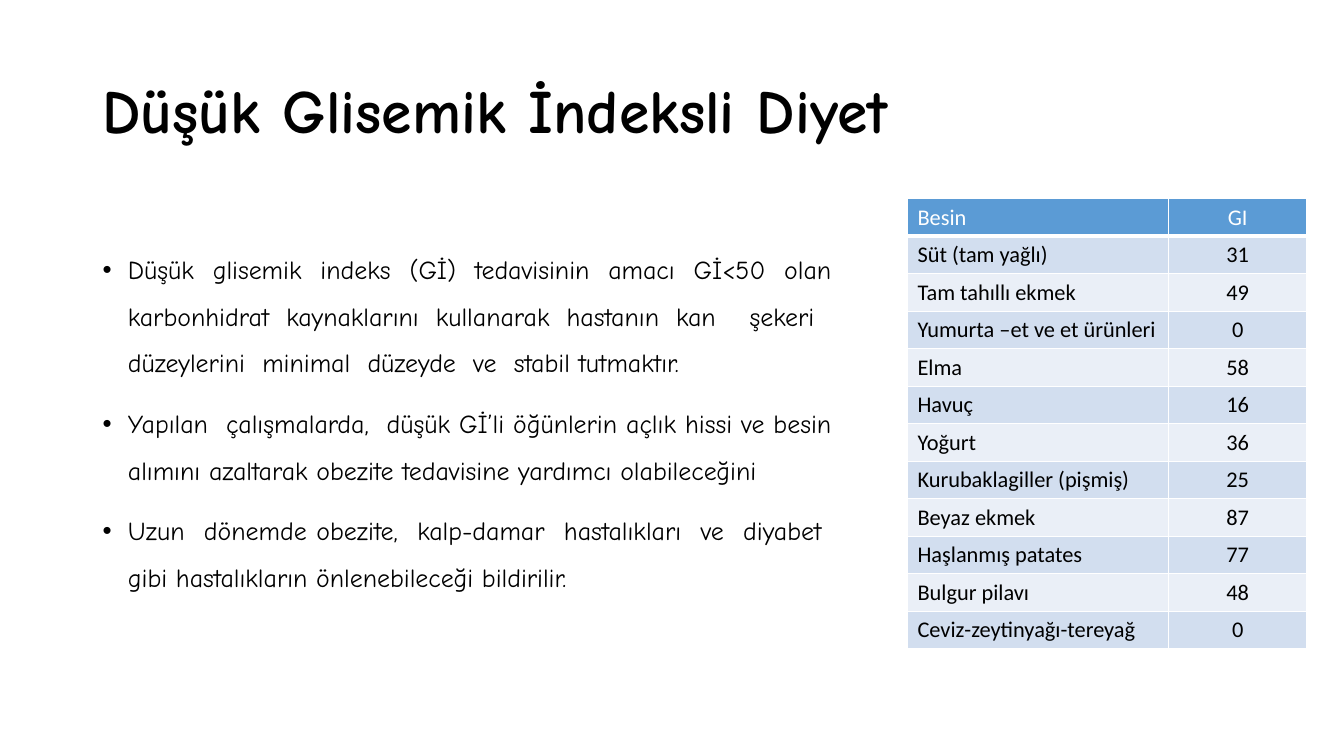
from lxml.etree import SubElement
from pptx import Presentation
from pptx.dml.color import RGBColor
from pptx.enum.text import MSO_ANCHOR as Anchor, MSO_AUTO_SIZE as AutoSize, PP_ALIGN as Align
from pptx.oxml.ns import qn
from pptx.util import Cm, Pt

TITLE = "Düşük Glisemik İndeksli Diyet"
POINTS = [
    "Düşük glisemik indeks (Gİ) tedavisinin amacı Gİ<50 olan karbonhidrat kaynaklarını "
    "kullanarak hastanın kan  şekeri  düzeylerini  minimal  düzeyde  ve  stabil tutmaktır.",
    "Yapılan  çalışmalarda,  düşük Gİ’li öğünlerin açlık hissi ve besin alımını azaltarak "
    "obezite tedavisine yardımcı olabileceğini",
    "Uzun  dönemde obezite,  kalp-damar  hastalıkları  ve  diyabet  gibi hastalıkların "
    "önlenebileceği bildirilir.",
]
FOODS = [
    ("Besin", "GI"),
    ("Süt (tam yağlı)", 31),
    ("Tam tahıllı ekmek", 49),
    ("Yumurta –et ve et ürünleri", 0),
    ("Elma", 58),
    ("Havuç", 16),
    ("Yoğurt", 36),
    ("Kurubaklagiller (pişmiş)", 25),
    ("Beyaz ekmek", 87),
    ("Haşlanmış patates", 77),
    ("Bulgur pilavı", 48),
    ("Ceviz-zeytinyağı-tereyağ", 0),
]

BLACK, WHITE = "000000", "FFFFFF"
HEADER_FILL, BAND_FILLS = "5B9BD5", ("EAEFF7", "D2DEEF")
COLUMN_WIDTHS = (Cm(6.58), Cm(3.48))
ROW_HEIGHT = Cm(0.94)
TITLE_FONT = {"name": "Comic Neue", "size": Pt(44), "bold": True}
BODY_FONT = {"name": "Comic Neue", "size": Pt(18.5), "bold": False}
TABLE_FONT = {"name": "Calibri", "size": Pt(16), "bold": False}
TITLE_PARA = {"alignment": Align.LEFT, "line_spacing": 0.9}
BODY_PARA = {"alignment": Align.JUSTIFY, "line_spacing": 1.5, "space_before": Pt(10)}


def color(value):
    return RGBColor.from_string(value)


def apply(target, values):
    for name, value in values.items():
        setattr(target, name, value)


def write(para, text, font, ink, layout):
    span = para.add_run()
    span.text = text
    apply(span.font, font)
    span.font.color.rgb = color(ink)
    apply(para, layout)


def place(box, left, top, width, height):
    apply(box, {"left": Cm(left), "top": Cm(top), "width": Cm(width), "height": Cm(height)})
    apply(box.text_frame, {"auto_size": AutoSize.NONE, "word_wrap": True})


def add_borders(cell, bottom_points):
    properties = cell._tc.get_or_add_tcPr()
    for side, points in (("L", 1), ("R", 1), ("T", 1), ("B", bottom_points)):
        line = SubElement(properties, qn(f"a:ln{side}"), w=str(Pt(points)))
        SubElement(SubElement(line, qn("a:solidFill")), qn("a:srgbClr"), val=WHITE)


def fill_title(box):
    place(box, 2.33, 1.01, 29.21, 3.68)
    box.text_frame.vertical_anchor = Anchor.MIDDLE
    write(box.text_frame.paragraphs[0], TITLE, TITLE_FONT, BLACK, TITLE_PARA)


def fill_body(box):
    place(box, 2.33, 5.87, 18.87, 11)
    frame = box.text_frame
    for index, point in enumerate(POINTS):
        para = frame.add_paragraph() if index else frame.paragraphs[0]
        write(para, point, BODY_FONT, BLACK, BODY_PARA)
        properties = para._p.get_or_add_pPr()
        properties.set("marL", str(Cm(0.64)))
        properties.set("indent", str(Cm(-0.64)))


def add_food_table(page):
    table = page.shapes.add_table(
        len(FOODS), len(COLUMN_WIDTHS), Cm(22.87), Cm(5.01),
        sum(COLUMN_WIDTHS), ROW_HEIGHT * len(FOODS)).table
    for column, width in zip(table.columns, COLUMN_WIDTHS):
        column.width = width
    for row, values in enumerate(FOODS):
        table.rows[row].height = ROW_HEIGHT
        header = row == 0
        for column, value in enumerate(values):
            cell = table.cell(row, column)
            add_borders(cell, 3 if header else 1)
            cell.fill.solid()
            cell.fill.fore_color.rgb = color(HEADER_FILL if header else BAND_FILLS[row % 2])
            write(cell.text_frame.paragraphs[0], str(value), TABLE_FONT,
                  WHITE if header else BLACK,
                  {"alignment": Align.CENTER if column else Align.LEFT})


def main():
    deck = Presentation()
    apply(deck, {"slide_width": Cm(33.87), "slide_height": Cm(19.05)})
    page = deck.slides.add_slide(deck.slide_layouts[1])
    fill_title(page.shapes.title)
    fill_body(page.placeholders[1])
    add_food_table(page)
    deck.save("out.pptx")


if __name__ == "__main__":
    main()
